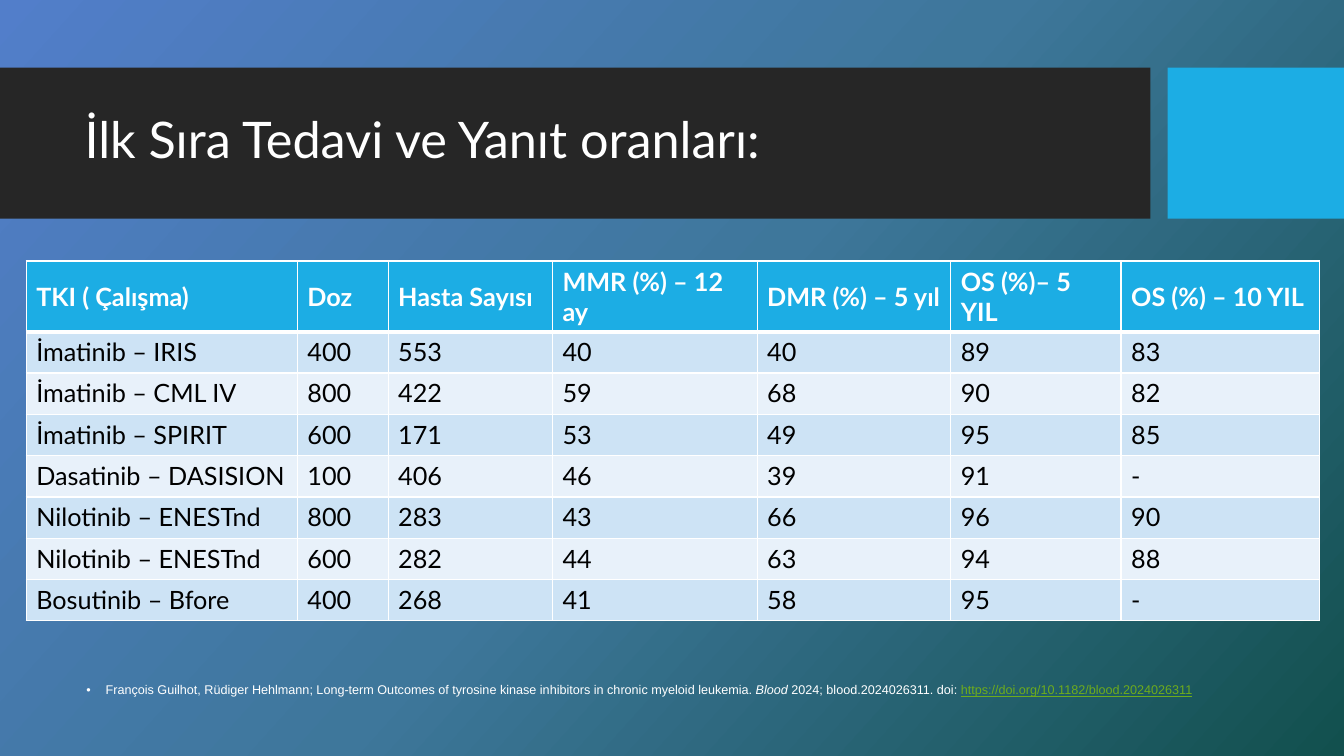
from copy import deepcopy

from lxml import etree
from pptx import Presentation
from pptx.dml.color import RGBColor
from pptx.enum import shapes, text
from pptx.oxml import ns
from pptx.util import Emu, Pt

PX = 9144
COLORS = {
    "white": "FFFFFF",
    "black": "000000",
    "banner": "262626",
    "accent": "1CADE4",
    "band_dark": "CDE3F5",
    "band_light": "E8F1FA",
    "link": "6EAC1C",
    "sky": "527ECA",
    "steel": "3E779B",
    "pine": "12504E",
}
COLUMN_WIDTHS = [269, 90, 163, 203, 192, 169, 197]
HEADER_HEIGHT, ROW_HEIGHT = 70, 41
HEADINGS = ["TKI ( Çalışma)", "Doz", "Hasta Sayısı", "MMR (%) – 12 ay",
            "DMR (%) – 5 yıl", "OS (%)– 5 YIL", "OS (%) – 10 YIL"]
TRIALS = [
    ["İmatinib – IRIS", "400", "553", "40", "40", "89", "83"],
    ["İmatinib – CML IV", "800", "422", "59", "68", "90", "82"],
    ["İmatinib – SPIRIT", "600", "171", "53", "49", "95", "85"],
    ["Dasatinib – DASISION", "100", "406", "46", "39", "91", "-"],
    ["Nilotinib – ENESTnd", "800", "283", "43", "66", "96", "90"],
    ["Nilotinib – ENESTnd", "600", "282", "44", "63", "94", "88"],
    ["Bosutinib – Bfore", "400", "268", "41", "58", "95", "-"],
]


def px(length):
    return Emu(length * PX)


def rgb(name):
    return RGBColor.from_string(COLORS[name])


def paint_background(page, names, angle):
    fill = page.background.fill
    fill.gradient()
    fill.gradient_angle = 360 - angle
    stops = page.element.find(".//" + ns.qn("a:gsLst"))
    while len(stops) < len(names):
        stops.append(deepcopy(stops[0]))
    for index, (stop, name) in enumerate(zip(fill.gradient_stops, names)):
        stop.position = index / (len(names) - 1)
        stop.color.rgb = rgb(name)


def add_block(page, left, top, width, height, color):
    block = page.shapes.add_shape(shapes.MSO_SHAPE.RECTANGLE,
                                  px(left), px(top), px(width), px(height))
    block.shadow.inherit = False
    block.fill.solid()
    block.fill.fore_color.rgb = rgb(color)
    block.line.fill.background()


def add_span(para, content, size=18, font="Lato", color="white",
             bold=False, italic=False, underline=False):
    span = para.add_run()
    span.text = content
    span.font.size = Pt(size)
    span.font.name = font
    span.font.color.rgb = rgb(color)
    span.font.bold = bold
    span.font.italic = italic
    span.font.underline = underline


def add_text_box(page, left, top, width, height):
    box = page.shapes.add_textbox(px(left), px(top), px(width), px(height))
    box.text_frame.word_wrap = True
    return box.text_frame


def add_title(page, content):
    frame = add_text_box(page, 74, 82, 1051, 118)
    frame.vertical_anchor = text.MSO_ANCHOR.MIDDLE
    para = frame.paragraphs[0]
    para.line_spacing = 0.9
    add_span(para, content, size=36)


def set_borders(cell, widths):
    properties = cell._tc.get_or_add_tcPr()
    for index, (side, width) in enumerate(widths.items()):
        line = etree.Element(ns.qn("a:ln" + side), w=str(Pt(width)))
        fill = etree.SubElement(line, ns.qn("a:solidFill"))
        etree.SubElement(fill, ns.qn("a:srgbClr"), val=COLORS["white"])
        properties.insert(index, line)


def fill_cell(cell, content, fill, color, bold, top, bottom):
    cell.fill.solid()
    cell.fill.fore_color.rgb = rgb(fill)
    add_span(cell.text_frame.paragraphs[0], content, color=color, bold=bold)
    if bold:
        cell.vertical_anchor = text.MSO_ANCHOR.MIDDLE
    set_borders(cell, {"L": 1, "R": 1, "T": top, "B": bottom})


def add_trial_table(page):
    rows = [HEADINGS, *TRIALS]
    height = HEADER_HEIGHT + ROW_HEIGHT * len(TRIALS)
    table = page.shapes.add_table(len(rows), len(HEADINGS), px(26), px(259),
                                  px(sum(COLUMN_WIDTHS)), px(height)).table
    for column, width in zip(table.columns, COLUMN_WIDTHS):
        column.width = px(width)
    for row_index, values in enumerate(rows):
        header = row_index == 0
        band = "band_dark" if row_index % 2 else "band_light"
        table.rows[row_index].height = px(HEADER_HEIGHT if header else ROW_HEIGHT)
        for column_index, value in enumerate(values):
            fill_cell(table.cell(row_index, column_index), value,
                      fill="accent" if header else band,
                      color="white" if header else "black",
                      bold=header,
                      top=3 if row_index == 1 else 1,
                      bottom=3 if header else 1)


def add_citation(page, spans):
    frame = add_text_box(page, 76, 672, 1150, 25)
    frame.auto_size = text.MSO_AUTO_SIZE.SHAPE_TO_FIT_TEXT
    para = frame.paragraphs[0]
    properties = para._p.get_or_add_pPr()
    properties.set("marL", str(px(19)))
    properties.set("indent", str(px(-19)))
    etree.SubElement(properties, ns.qn("a:buFont"), typeface="Arial")
    etree.SubElement(properties, ns.qn("a:buChar"), char="•")
    for content, style in spans:
        add_span(para, content, size=9, font="Arial", **style)


def main():
    deck = Presentation()
    deck.slide_width, deck.slide_height = px(1333), px(750)
    page = deck.slides.add_slide(deck.slide_layouts[6])
    paint_background(page, ["sky", "steel", "pine"], 42)
    add_block(page, 0, 67, 1141, 150, "banner")
    add_block(page, 1158, 67, 175, 150, "accent")
    add_title(page, "İlk Sıra Tedavi ve Yanıt oranları:")
    add_trial_table(page)
    add_citation(page, [
        ("François Guilhot, Rüdiger Hehlmann; Long-term Outcomes of tyrosine "
         "kinase inhibitors in chronic myeloid leukemia. ", {}),
        ("Blood", {"italic": True}),
        (" 2024; blood.2024026311. doi: ", {}),
        ("https://doi.org/10.1182/blood.2024026311",
         {"color": "link", "underline": True}),
    ])
    deck.save("out.pptx")


if __name__ == "__main__":
    main()
